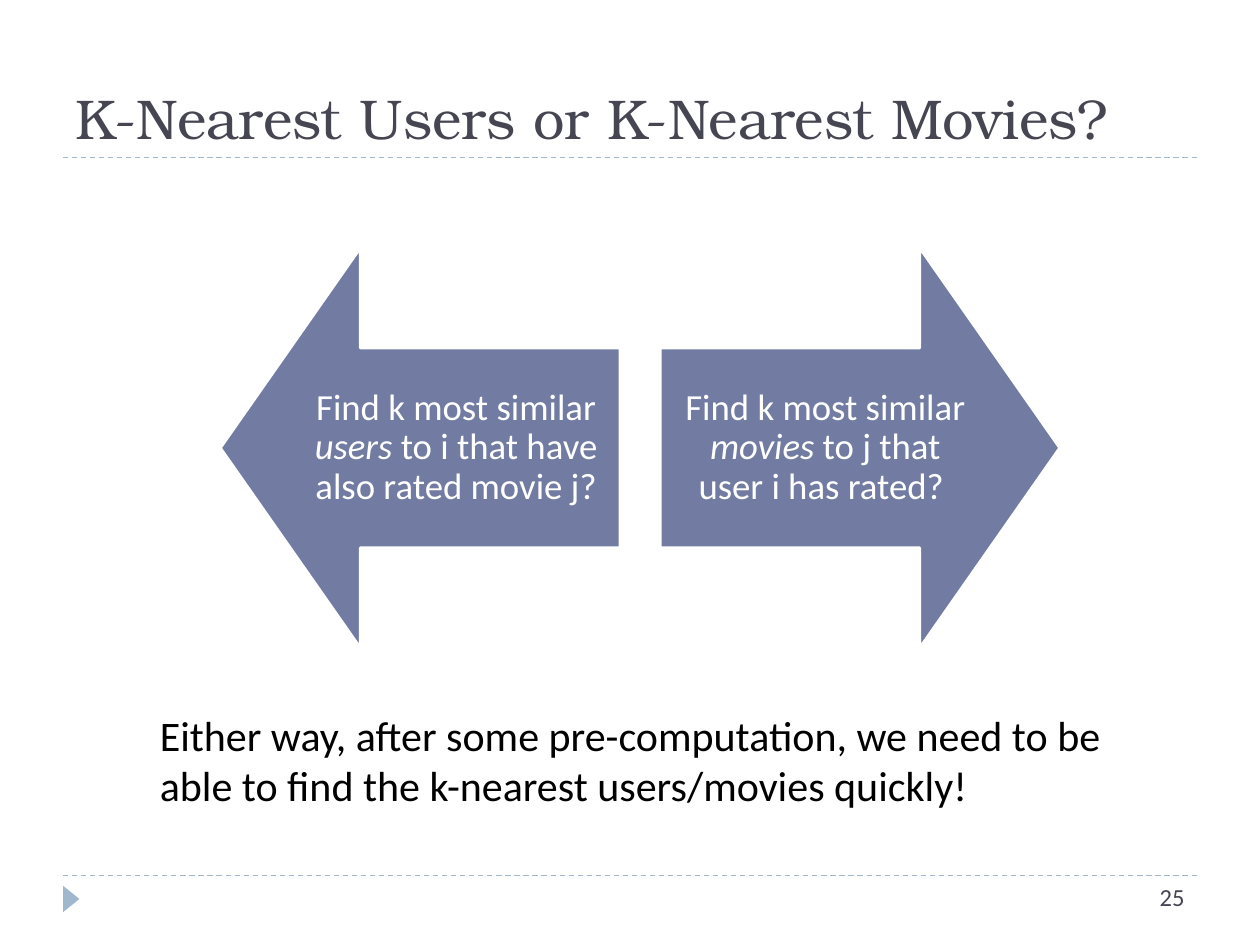
from dataclasses import dataclass
from pptx import Presentation
from pptx.dml.color import RGBColor
from pptx.enum.dml import MSO_LINE_DASH_STYLE as DASH
from pptx.enum.shapes import MSO_CONNECTOR, MSO_SHAPE
from pptx.enum.text import MSO_ANCHOR, MSO_AUTO_SIZE, PP_ALIGN
from pptx.oxml.ns import qn
from pptx.util import Inches, Pt
from lxml import etree


@dataclass(frozen=True)
class Theme:
    heading: str = "TeX Gyre Bonum"
    body: str = "Calibri"
    ink: str = "464653"
    black: str = "000000"
    white: str = "FFFFFF"
    accent: str = "727CA3"
    pale: str = "9FB8CD"
    title_size: int = 32
    arrow_size: int = 21
    note_size: int = 24
    number_size: int = 14


class Deck:
    def __init__(self, theme):
        self.theme = theme
        self.prs = Presentation()
        self.prs.slide_width, self.prs.slide_height = Inches(10), Inches(7.5)
        self.slide = self.prs.slides.add_slide(self.prs.slide_layouts[5])

    def add_runs(self, tf, runs, size, color, font, align=PP_ALIGN.LEFT, spacing=1.0):
        p = tf.paragraphs[0]
        p.alignment, p.line_spacing = align, spacing
        for text, italic in runs:
            r = p.add_run()
            r.text = text
            style = {"name": font, "size": Pt(size), "italic": italic, "bold": False}
            for key, value in style.items():
                setattr(r.font, key, value)
            r.font.color.rgb = RGBColor.from_string(color)

    def title(self, text, box):
        sp = self.slide.shapes.title
        sp.left, sp.top, sp.width, sp.height = map(Inches, box)
        tf = sp.text_frame
        tf.auto_size, tf.vertical_anchor = MSO_AUTO_SIZE.NONE, MSO_ANCHOR.BOTTOM
        self.add_runs(tf, [(text, False)], self.theme.title_size, self.theme.ink,
                      self.theme.heading)

    def text(self, runs, box, size, color, inset=None, anchor=MSO_ANCHOR.TOP, **layout):
        tf = self.slide.shapes.add_textbox(*map(Inches, box)).text_frame
        tf.word_wrap, tf.vertical_anchor = True, anchor
        if inset is not None:
            for side in ("left", "top", "right", "bottom"):
                setattr(tf, f"margin_{side}", Inches(inset))
        self.add_runs(tf, runs, size, color, self.theme.body, **layout)

    def rule(self, left, right, y):
        line = self.slide.shapes.add_connector(
            MSO_CONNECTOR.STRAIGHT, *map(Inches, (left, y, right, y)))
        line.line.color.rgb = RGBColor.from_string(self.theme.pale)
        line.line.width, line.line.dash_style = Pt(0.75), DASH.DASH
        etree.SubElement(line._element.spPr, qn("a:effectLst"))

    def shape(self, kind, box, fill, rotation, adjustments, outline=None):
        sp = self.slide.shapes.add_shape(kind, *map(Inches, box))
        sp.shadow.inherit = False
        sp.rotation = rotation
        for i, value in enumerate(adjustments):
            sp.adjustments[i] = value
        sp.fill.solid()
        sp.fill.fore_color.rgb = RGBColor.from_string(fill)
        if outline:
            sp.line.color.rgb = RGBColor.from_string(outline)
            sp.line.width = Pt(1.5)
        else:
            sp.line.fill.background()

    def arrow(self, left, label_left, rotation, runs):
        th, top, side = self.theme, 1.97, 3.17
        self.shape(MSO_SHAPE.UP_ARROW, (left, top, side, side), th.accent,
                   rotation, (0.5, 0.35), th.white)
        self.text(runs, (label_left, top + side / 4, 2.62, side / 2), th.arrow_size, th.white,
                  inset=0.16, anchor=MSO_ANCHOR.MIDDLE, align=PP_ALIGN.CENTER, spacing=0.9)


def main():
    theme = Theme()
    deck = Deck(theme)
    for y in (6.95, 1.25):
        deck.rule(0.5, 9.5, y)
    deck.shape(MSO_SHAPE.ISOSCELES_TRIANGLE, (0.46, 7.07, 0.21, 0.13), theme.pale, 90, (0.5,))
    deck.title("K-Nearest Users or K-Nearest Movies?", (0.5, 0.17, 9, 1.08))
    deck.arrow(1.75, 2.31, 270, [("Find k most similar ", False), ("users ", True),
                                 ("to i that have also rated movie j?", False)])
    deck.arrow(5.24, 5.24, 90, [("Find k most similar ", False), ("movies", True),
                                (" to j that user i has rated? ", False)])
    deck.text([("Either way, after some pre-computation, we need to be able to find "
                "the k-nearest users/movies quickly!", False)],
              (1.17, 5.58, 8.17, 0.91), theme.note_size, theme.black)
    deck.text([("25", False)], (7.17, 6.95, 2.33, 0.4), theme.number_size, theme.ink,
              align=PP_ALIGN.RIGHT)
    deck.prs.save("out.pptx")


if __name__ == "__main__":
    main()
